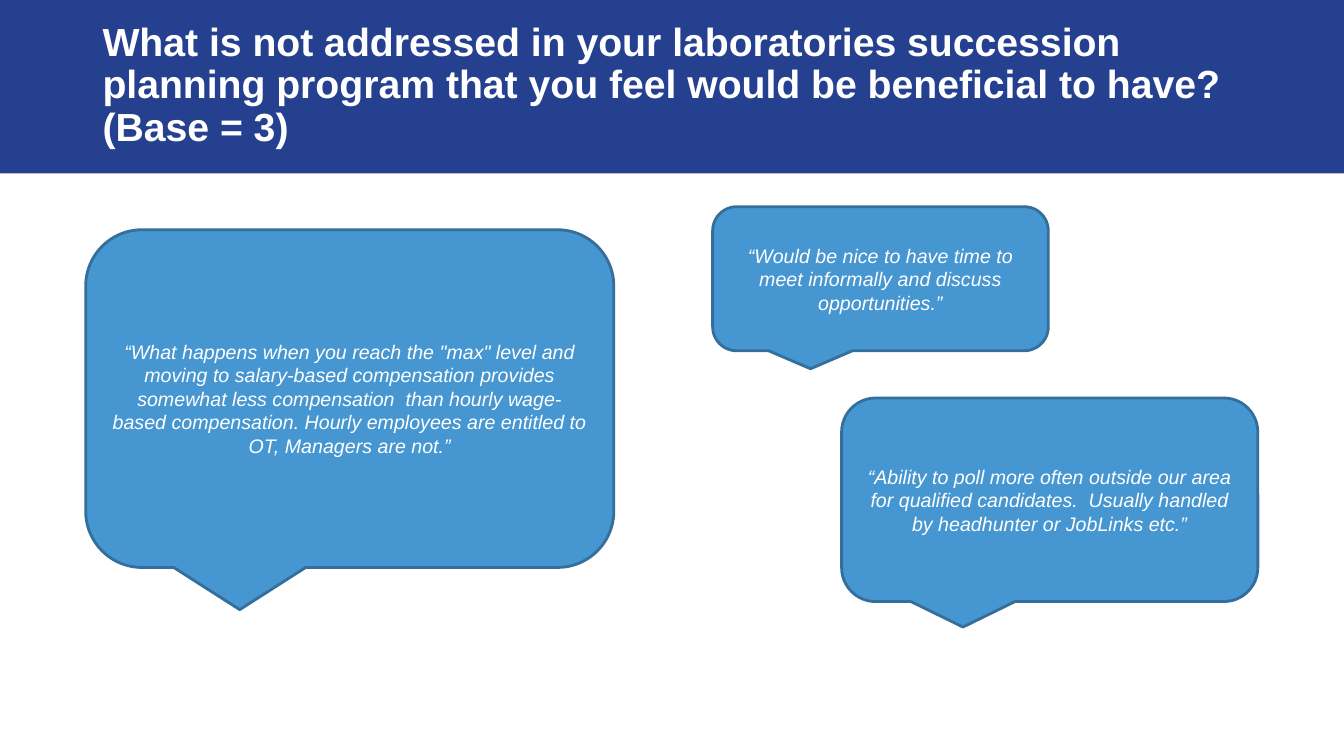
from pptx import Presentation
from pptx.dml.color import RGBColor
from pptx.enum.shapes import MSO_SHAPE
from pptx.enum.text import MSO_ANCHOR, PP_ALIGN
from pptx.util import Cm, Pt

RECTANGLE = MSO_SHAPE.RECTANGLE
CALLOUT = MSO_SHAPE.ROUNDED_RECTANGULAR_CALLOUT
MIDDLE = MSO_ANCHOR.MIDDLE
LEFT, CENTER = PP_ALIGN.LEFT, PP_ALIGN.CENTER

NAVY = RGBColor(0x25, 0x40, 0x8F)
BLUE = RGBColor(0x46, 0x96, 0xD2)
DARK_BLUE = RGBColor(0x34, 0x6F, 0x9B)
WHITE = RGBColor(0xFF, 0xFF, 0xFF)

SLIDE_WIDTH, SLIDE_HEIGHT = 33.87, 19.05
BAND_HEIGHT = 4.37
TITLE_ONLY = 5

TITLE = ("What is not addressed in your laboratories succession planning program "
         "that you feel would be beneficial to have? (Base = 3)")

# Quote, then left, top, width and height in centimetres
QUOTES = [
    ("“What happens when you reach the \"max\" level and moving to salary-based "
     "compensation provides somewhat less compensation  than hourly wage-based "
     "compensation. Hourly employees are entitled to OT, Managers are not.”",
     (2.16, 5.79, 13.31, 8.51)),
    ("“Would be nice to have time to meet informally and discuss opportunities.”",
     (17.96, 5.21, 8.46, 3.63)),
    ("“Ability to poll more often outside our area for qualified candidates.  "
     "Usually handled by headhunter or JobLinks etc.”",
     (21.21, 10.03, 10.49, 5.13)),
]


class QuoteSlide:
    font_name = "Arial"

    def __init__(self, presentation):
        layout = presentation.slide_layouts[TITLE_ONLY]
        self.slide = presentation.slides.add_slide(layout)

    def add_filled_shape(self, kind, box, color):
        shape = self.slide.shapes.add_shape(kind, *map(Cm, box))
        shape.shadow.inherit = False
        shape.fill.solid()
        shape.fill.fore_color.rgb = color
        return shape

    def set_text(self, shape, text, size, alignment, bold=False, italic=False):
        frame = shape.text_frame
        frame.word_wrap = True
        frame.vertical_anchor = MIDDLE
        frame.text = text
        paragraph = frame.paragraphs[0]
        paragraph.alignment = alignment
        font = paragraph.font
        font.name, font.size = self.font_name, Pt(size)
        font.bold, font.italic = bold, italic
        font.color.rgb = WHITE
        return paragraph

    def add_title(self, text):
        """Place the title over a full-width band."""
        band = self.add_filled_shape(RECTANGLE, (0, 0, SLIDE_WIDTH, BAND_HEIGHT), NAVY)
        band.line.fill.background()
        title = self.slide.shapes.title
        title.left, title.top, title.width, title.height = map(Cm, (2.33, 0.43, 29.21, 3.48))
        title._element.addprevious(band._element)
        paragraph = self.set_text(title, text, 28, LEFT, bold=True)
        paragraph.line_spacing = 0.9

    def add_quote(self, text, box):
        callout = self.add_filled_shape(CALLOUT, box, BLUE)
        callout.line.color.rgb = DARK_BLUE
        callout.line.width = Pt(2)
        self.set_text(callout, text, 14, CENTER, italic=True)


def main():
    presentation = Presentation()
    presentation.slide_width = Cm(SLIDE_WIDTH)
    presentation.slide_height = Cm(SLIDE_HEIGHT)
    quote_slide = QuoteSlide(presentation)
    quote_slide.add_title(TITLE)
    for text, box in QUOTES:
        quote_slide.add_quote(text, box)
    presentation.save("out.pptx")


if __name__ == "__main__":
    main()
